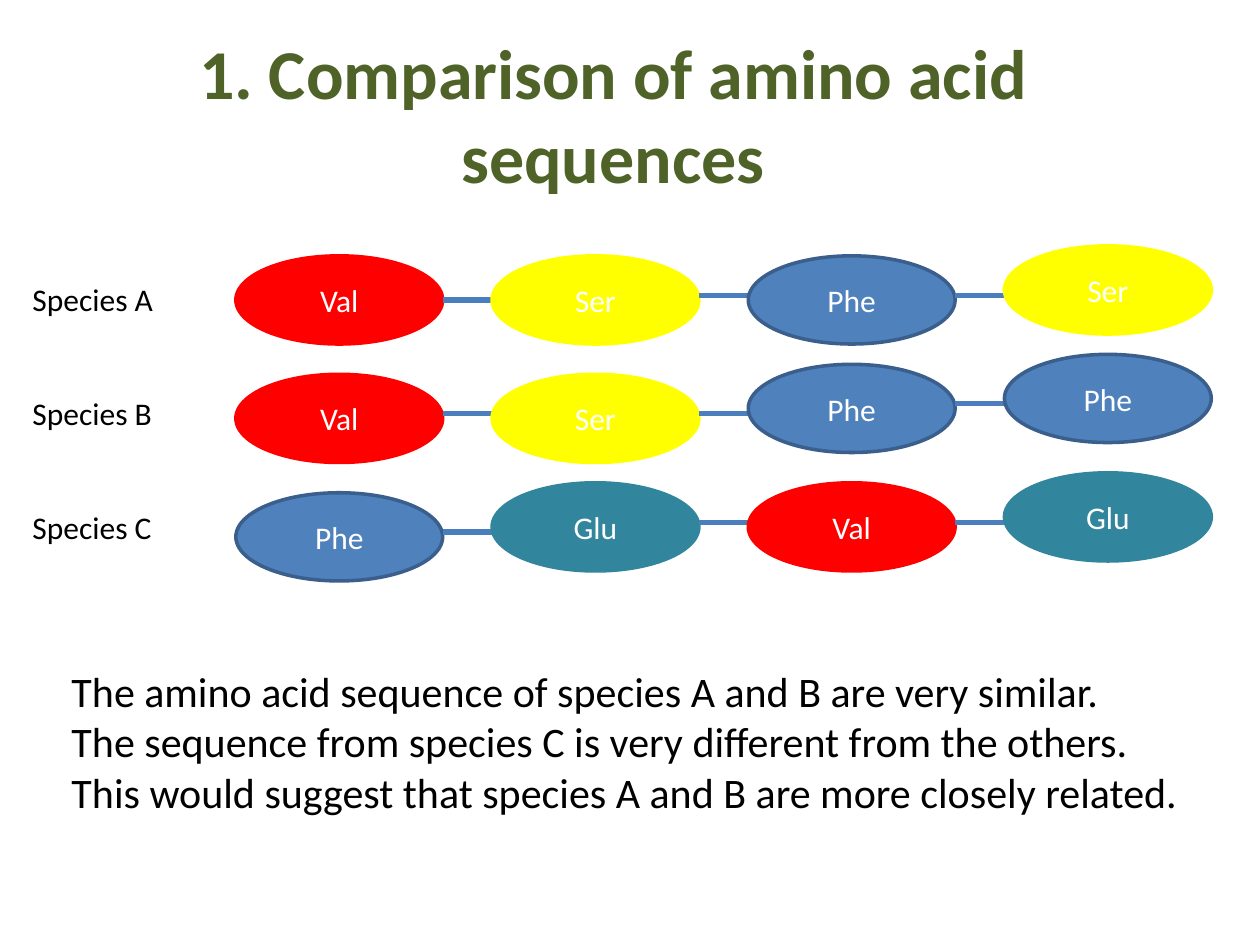
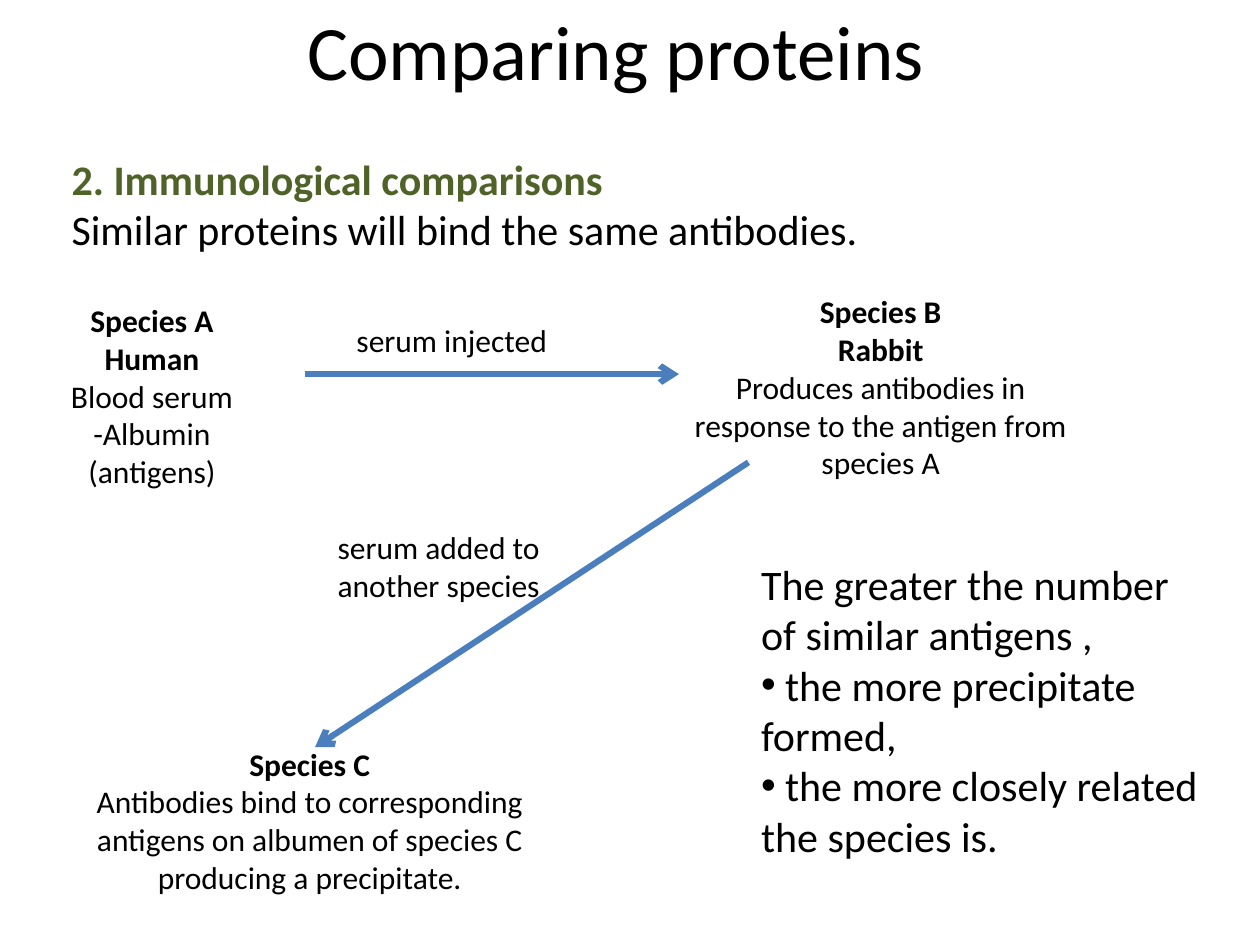
from dataclasses import dataclass

from lxml import etree
from pptx import Presentation
from pptx import util as u
from pptx.dml.color import RGBColor
from pptx.enum import shapes, text
from pptx.oxml.ns import qn


@dataclass(frozen=True)
class Theme:
    font: str = "Calibri"
    ink: str = "000000"
    white: str = "FFFFFF"
    accent: str = "4F6228"
    link: str = "4B7EBC"
    heading_size: float = 40
    title_size: float = 44
    body_size: float = 24
    label_size: float = 18
    acid_line: float = 2
    bond_line: float = 3
    arrow_line: float = 3.5


THEME = Theme()
CENTER = text.PP_ALIGN.CENTER
LEFT = text.PP_ALIGN.LEFT

# Fill and outline of each amino acid
ACID_COLOURS = {
    "Val": ("FF0000", "FF0000"),
    "Ser": ("FFFF00", "FFFF00"),
    "Phe": ("4F81BD", "3A5F8C"),
    "Glu": ("31859C", "31859C"),
}
# Each amino acid with the number of steps it sits above its row
SEQUENCES = {
    "Species A": [("Val", 0), ("Ser", 0), ("Phe", 0), ("Ser", 1)],
    "Species B": [("Val", 0), ("Ser", 0), ("Phe", 1), ("Phe", 2)],
    "Species C": [("Phe", 0), ("Glu", 1), ("Val", 1), ("Glu", 2)],
}
ACID_LEFT, ACID_TOP = 134.8, 146.2
ACID_WIDTH, ACID_HEIGHT = 118.2, 50.4
COLUMN_PITCH, ROW_PITCH = 146.4, 67.7
LIFT_STEP = 5.7
BOND_DROP = 22.5
FIRST_BOND_NUDGE = 2.7


def pts(*lengths):
    return [u.Pt(length) for length in lengths]


def style(paragraph, size, colour=THEME.ink, bold=False, align=LEFT):
    paragraph.alignment = align
    font = paragraph.font
    font.name, font.size, font.bold = THEME.font, u.Pt(size), bold
    font.color.rgb = RGBColor.from_string(colour)


def set_title(slide, wording, box, size, colour=THEME.ink, bold=False):
    title = slide.shapes.title
    title.left, title.top, title.width, title.height = pts(*box)
    frame = title.text_frame
    frame.text = wording
    frame.auto_size = text.MSO_AUTO_SIZE.NONE
    frame.vertical_anchor = text.MSO_ANCHOR.MIDDLE
    style(frame.paragraphs[0], size, colour, bold)
    frame.paragraphs[0].alignment = CENTER


def add_text(slide, box, lines, size, bold_lines=0, align=LEFT, gap=0):
    """Add a wrapped text block, its first bold_lines bold; return its paragraphs."""
    frame = slide.shapes.add_textbox(*pts(*box)).text_frame
    frame.word_wrap = True
    frame.text = "\n".join(lines)
    for index, paragraph in enumerate(frame.paragraphs):
        style(paragraph, size, bold=index < bold_lines, align=align)
        if index:
            paragraph.space_before = u.Pt(gap)
    return frame.paragraphs


def fill_list(slide, box, lead, points):
    """Fill the body placeholder with a plain lead line and run-in bullets."""
    body = slide.placeholders[1]
    body.left, body.top, body.width, body.height = pts(*box)
    frame = body.text_frame
    frame.text = "\n".join([lead] + [f" {point}" for point in points])
    frame.auto_size = text.MSO_AUTO_SIZE.NONE
    for index, paragraph in enumerate(frame.paragraphs):
        style(paragraph, THEME.body_size)
        paragraph.space_before = u.Pt(0)
        properties = paragraph._p.get_or_add_pPr()
        properties.set("marL", "0")
        properties.set("indent", "0")
        if index:
            etree.SubElement(properties, qn("a:buFont"), typeface="Arial")
            etree.SubElement(properties, qn("a:buChar"), char="•")
        else:
            etree.SubElement(properties, qn("a:buNone"))


def add_link(slide, start, end, weight, arrow=False):
    link = slide.shapes.add_connector(
        shapes.MSO_CONNECTOR.STRAIGHT, *pts(*start, *end))
    link.line.color.rgb = RGBColor.from_string(THEME.link)
    link.line.width = u.Pt(weight)
    if arrow:
        etree.SubElement(link.line._get_or_add_ln(), qn("a:tailEnd"), type="arrow")
    etree.SubElement(link._element.spPr, qn("a:effectLst"))


def add_acid(slide, acid, left, top):
    fill, outline = ACID_COLOURS[acid]
    oval = slide.shapes.add_shape(
        shapes.MSO_SHAPE.OVAL, *pts(left, top, ACID_WIDTH, ACID_HEIGHT))
    oval.shadow.inherit = False
    oval.fill.solid()
    oval.fill.fore_color.rgb = RGBColor.from_string(fill)
    oval.line.color.rgb = RGBColor.from_string(outline)
    oval.line.width = u.Pt(THEME.acid_line)
    oval.text_frame.text = acid
    oval.text_frame.vertical_anchor = text.MSO_ANCHOR.MIDDLE
    style(oval.text_frame.paragraphs[0], THEME.label_size, THEME.white, align=CENTER)


def add_sequence(slide, row, acids):
    """Draw one species' row of amino acids, each bonded to the next."""
    for column, (acid, lift) in enumerate(acids):
        left = ACID_LEFT + column * COLUMN_PITCH
        top = ACID_TOP + row * ROW_PITCH - lift * LIFT_STEP
        add_acid(slide, acid, left, top)
        if column < len(acids) - 1:
            nudge = FIRST_BOND_NUDGE if row == column == 0 else 0
            bond_y = top + BOND_DROP + nudge
            add_link(slide, (left + ACID_WIDTH, bond_y),
                     (left + COLUMN_PITCH, bond_y), THEME.bond_line)


def build_sequences(deck):
    slide = deck.slides.add_slide(deck.slide_layouts[5])
    set_title(slide, "1. Comparison of amino acid sequences",
              (16.6, 39.6, 667.4, 50.4), THEME.heading_size, THEME.accent, True)
    for row, acids in enumerate(SEQUENCES.values()):
        add_sequence(slide, row, acids)
    add_text(slide, (11.5, 156.6, 112.3, 159.5), SEQUENCES, THEME.label_size, gap=43.5)
    add_text(slide, (33.8, 376.6, 669.6, 123.8), [
        "The amino acid sequence of species A and B are very similar.",
        "The sequence from species C is very different from the others.",
        "This would suggest that species A and B are more closely related.",
    ], THEME.body_size)


def build_immunology(deck):
    slide = deck.slides.add_slide(deck.slide_layouts[1])
    set_title(slide, "Comparing proteins", (28, -16.6, 648, 90), THEME.title_size)
    fill_list(slide, (427.7, 315.4, 264.2, 211),
              "The greater the number of similar antigens ,",
              ["the more precipitate formed,",
               "the more closely related the species is."])

    heading = add_text(slide, (33.8, 84.2, 641.5, 65.5), [
        "2. Immunological comparisons",
        "Similar proteins will bind the same antibodies.",
    ], THEME.body_size, bold_lines=1)[0]
    heading.font.color.rgb = RGBColor.from_string(THEME.accent)

    species_blocks = [
        ((16.6, 168.5, 140.4, 116.6), 2,
         ["Species A", "Human", "Blood serum -Albumin", "(antigens)"]),
        ((382.3, 163.4, 241.9, 159.8), 2,
         ["Species B", "Rabbit",
          "Produces antibodies in response to the antigen from species A"]),
        ((28, 421.9, 298, 94.3), 1,
         ["Species C", "Antibodies bind to corresponding",
          "antigens on albumen of species C", "producing a precipitate."]),
    ]
    for box, bold_lines, lines in species_blocks:
        add_text(slide, box, lines, THEME.label_size, bold_lines, CENTER)

    step_labels = [
        ((196.6, 180, 151.9, 28.8), "serum injected"),
        ((185.8, 298, 140.4, 51.1), "serum added to another species"),
    ]
    for box, label in step_labels:
        add_text(slide, box, [label], THEME.label_size)
    for start, end in [((174.2, 213.8), (388, 213.8)), ((427.7, 264.2), (180, 427))]:
        add_link(slide, start, end, THEME.arrow_line, arrow=True)


def main():
    deck = Presentation()
    deck.slide_width, deck.slide_height = pts(720, 540)
    build_sequences(deck)
    build_immunology(deck)
    deck.save("out.pptx")


if __name__ == "__main__":
    main()
